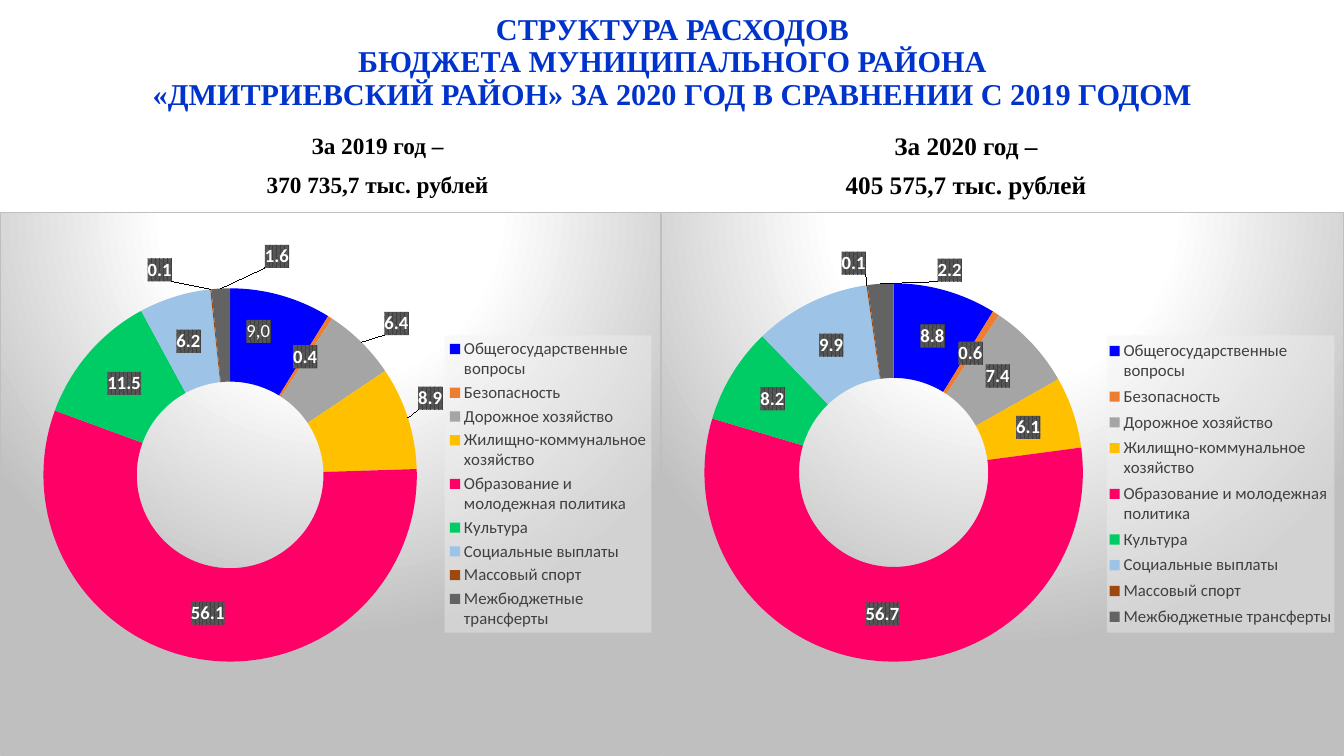
from lxml import etree
from pptx import Presentation
from pptx.chart.data import CategoryChartData as ChartData
from pptx.dml.color import RGBColor as Color
from pptx.enum.chart import XL_CHART_TYPE as ChartType, XL_LEGEND_POSITION as LegendPosition
from pptx.enum.text import MSO_ANCHOR as Anchor, PP_ALIGN as Align
from pptx.oxml import parse_xml
from pptx.util import Emu, Pt

SCALE = 914400 / 100.8
COLORS = {
    "title": "0033CC", "text": "000000", "legend": "404040", "label": "FFFFFF",
    "light": "FFFFFF", "shade": "BFBFBF", "legend_back": "F2F2F2",
    "label_dark": "404040", "label_light": "595959",
}
SECTORS = {
    "Общегосударственные вопросы": "0000FF",
    "Безопасность": "ED7D31",
    "Дорожное хозяйство": "A5A5A5",
    "Жилищно-коммунальное хозяйство": "FFC000",
    "Образование и молодежная политика": "FF0066",
    "Культура": "00CC66",
    "Социальные выплаты": "9DC3E6",
    "Массовый спорт": "9E480E",
    "Межбюджетные трансферты": "636363",
}
NAMESPACES = (
    'xmlns:c="http://schemas.openxmlformats.org/drawingml/2006/chart" '
    'xmlns:a="http://schemas.openxmlformats.org/drawingml/2006/main"'
)
YEARS = [
    {
        "heading": ["За 2019 год –", "370 735,7 тыс. рублей"],
        "heading_box": (93, 126, 569, 78), "size": 16.6, "spacing": 0.9,
        "frame": (0, 212, 661, 544), "plot": (43, 76, 374, 374),
        "legend": (445, 123, 207, 298),
        "values": [8.8, 0.4, 6.4, 8.9, 56.1, 11.5, 6.2, 0.1, 1.6],
        "shifts": {0: (-10, -9), 2: (68, -52), 3: (67, -34), 7: (-56, -66), 8: (54, -79)},
        "custom": {0: "9,0"},
    },
    {
        "heading": ["За 2020 год –", "405 575,7 тыс. рублей"],
        "heading_box": (680, 126, 572, 78), "size": 18, "spacing": 0.8,
        "frame": (661, 212, 683, 544), "plot": (43, 71, 379, 379),
        "legend": (446, 123, 228, 298),
        "values": [8.8, 0.6, 7.4, 6.1, 56.7, 8.2, 9.9, 0.1, 2.2],
        "shifts": {7: (-20, -69), 8: (66, -61)},
        "custom": {},
    },
]


def px(length):
    """Turn pixels into EMU."""
    return Emu(round(length * SCALE))


def style_font(font, size, color, name="Calibri", bold=False):
    """Set the face, size, colour and weight of a font."""
    font.name, font.size, font.bold = name, Pt(size), bold
    font.color.rgb = Color.from_string(COLORS[color])


def add_text(page, place, lines, size, color="text", spacing=0.9, before=0, anchor=Anchor.BOTTOM):
    """Add centred bold paragraphs, with line breaks inside them where given."""
    box = page.shapes.add_textbox(*map(px, place))
    frame = box.text_frame
    frame.word_wrap, frame.vertical_anchor = True, anchor
    for number, line in enumerate(lines):
        para = frame.add_paragraph() if number else frame.paragraphs[0]
        para.alignment, para.line_spacing, para.space_before = Align.CENTER, spacing, Pt(before)
        for position, part in enumerate(line.split("\n")):
            if position:
                para.add_line_break()
            span = para.add_run()
            span.text = part
            style_font(span.font, size, color, "Times New Roman", True)


def solid(color, alpha=100):
    """Return the markup of a solid fill."""
    return (f'<a:solidFill><a:srgbClr val="{COLORS[color]}">'
            f'<a:alpha val="{alpha * 1000}"/></a:srgbClr></a:solidFill>')


def add_shape_format(parent, content):
    """Put fill and line markup ahead of the text format of a chart part."""
    following = (parent.xpath("./c:txPr") or parent.xpath("./c:showLegendKey"))[0]
    following.addprevious(parse_xml(f"<c:spPr {NAMESPACES}>{content}</c:spPr>"))


def set_layout(parent, index, place, frame, modes=()):
    """Place a chart part by fractions of the chart frame."""
    for old in parent.xpath("./c:layout"):
        parent.remove(old)
    layout = parse_xml(f"<c:layout {NAMESPACES}><c:manualLayout/></c:layout>")
    uri = layout.nsmap["c"]
    entries = list(modes)
    for tag, length, total in zip("xywh", place, frame[2:] * 2):
        entries.append((tag, round(length / total, 4)))
    for tag, value in entries:
        etree.SubElement(layout[0], f"{{{uri}}}{tag}").set("val", str(value))
    parent.insert(index, layout)


def label_format():
    """Return the markup of the dark striped label background."""
    return (f'<a:pattFill prst="pct75"><a:fgClr><a:srgbClr val="{COLORS["label_dark"]}"/></a:fgClr>'
            f'<a:bgClr><a:srgbClr val="{COLORS["label_light"]}"/></a:bgClr></a:pattFill>')


def style_labels(chart, year):
    """Format the value labels and move those that stand apart."""
    series = chart.plots[0].series[0]
    labels = series.data_labels
    labels.show_value = True
    labels.number_format, labels.number_format_is_linked = "0.0", False
    style_font(labels.font, 13.3, "label", bold=True)
    add_shape_format(chart.element.xpath(".//c:ser/c:dLbls")[0], label_format())
    for index, shift in year["shifts"].items():
        label = series.points[index].data_label
        if index in year["custom"]:
            para = label.text_frame.paragraphs[0]
            span = para.add_run()
            span.text = year["custom"][index]
            style_font(span.font, 13.3, "label")
        else:
            style_font(label.font, 13.3, "label", bold=True)
        element = chart.element.xpath(f'.//c:ser/c:dLbls/c:dLbl[c:idx/@val="{index}"]')[0]
        set_layout(element, 1, shift, year["frame"])
        add_shape_format(element, label_format())


def style_legend(chart, year):
    """Place the legend on its translucent panel."""
    chart.has_legend = True
    legend = chart.legend
    legend.position, legend.include_in_layout = LegendPosition.RIGHT, False
    style_font(legend.font, 12, "legend")
    element = chart.element.xpath(".//c:legend")[0]
    set_layout(element, 1, year["legend"], year["frame"], [("xMode", "edge"), ("yMode", "edge")])
    add_shape_format(element, solid("legend_back", 39))


def style_background(chart):
    """Give the chart its radial gradient and thin border."""
    stops = "".join(
        f'<a:gs pos="{position * 1000}"><a:srgbClr val="{COLORS[color]}"/></a:gs>'
        for position, color in ((0, "light"), (39, "light"), (100, "shade")))
    add_shape_format(chart.element, (
        f'<a:gradFill><a:gsLst>{stops}</a:gsLst><a:path path="circle">'
        '<a:fillToRect l="50000" t="-80000" r="50000" b="180000"/></a:path></a:gradFill>'
        f'<a:ln w="{Pt(0.75)}">{solid("shade")}</a:ln>'))


def add_doughnut(page, year):
    """Add the doughnut chart of one year."""
    data = ChartData()
    data.categories = list(SECTORS)
    data.add_series("Series 1", year["values"])
    chart = page.shapes.add_chart(ChartType.DOUGHNUT, *map(px, year["frame"]), data).chart
    chart.has_title = False
    style_font(chart.font, 10, "text")
    plot = chart.plots[0]
    plot.vary_by_categories = True
    for index, color in enumerate(SECTORS.values()):
        fill = plot.series[0].points[index].format.fill
        fill.solid()
        fill.fore_color.rgb = Color.from_string(color)
    modes = [("layoutTarget", "inner"), ("xMode", "edge"), ("yMode", "edge")]
    set_layout(chart.element.xpath(".//c:plotArea")[0], 0, year["plot"], year["frame"], modes)
    style_labels(chart, year)
    style_legend(chart, year)
    style_background(chart)


def main():
    """Build the slide and save the deck."""
    deck = Presentation()
    deck.slide_width, deck.slide_height = px(1344), px(756)
    page = deck.slides.add_slide(deck.slide_layouts[6])
    title = ("СТРУКТУРА РАСХОДОВ\nБЮДЖЕТА МУНИЦИПАЛЬНОГО РАЙОНА\n"
             "«ДМИТРИЕВСКИЙ РАЙОН» ЗА 2020 ГОД В СРАВНЕНИИ С 2019 ГОДОМ")
    add_text(page, (93, 0, 1159, 126), [title], 21.6, color="title", anchor=Anchor.MIDDLE)
    for year in YEARS:
        add_text(page, year["heading_box"], year["heading"], year["size"],
                 spacing=year["spacing"], before=10)
        add_doughnut(page, year)
    deck.save("out.pptx")


if __name__ == "__main__":
    main()
